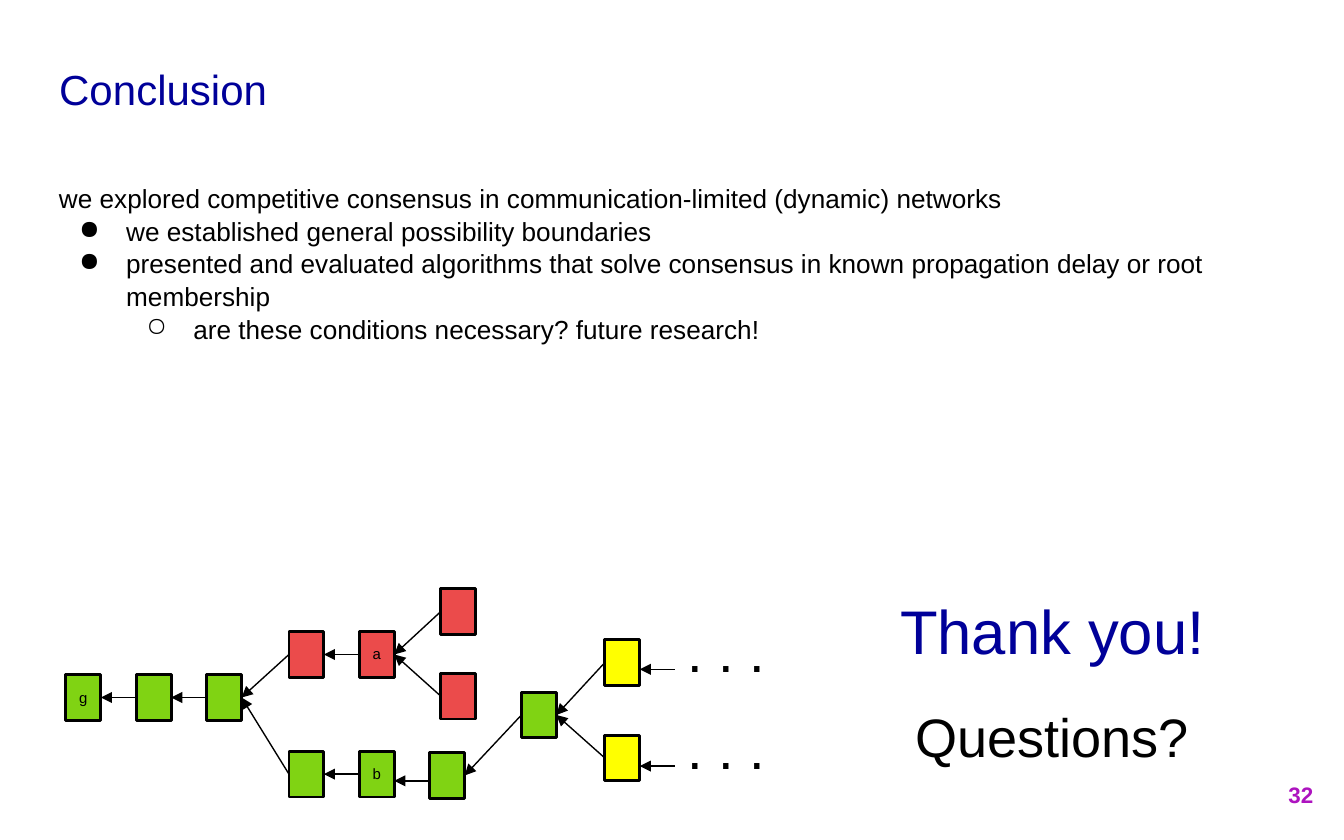
from lxml import etree
from pptx import Presentation
from pptx.dml.color import RGBColor
from pptx.enum.shapes import MSO_CONNECTOR, MSO_SHAPE
from pptx.enum.text import MSO_ANCHOR, PP_ALIGN
from pptx.oxml.ns import qn
from pptx.util import Inches, Pt

RECTANGLE, STRAIGHT = MSO_SHAPE.RECTANGLE, MSO_CONNECTOR.STRAIGHT
TOP, MIDDLE = MSO_ANCHOR.TOP, MSO_ANCHOR.MIDDLE
LEFT, CENTER, RIGHT = PP_ALIGN.LEFT, PP_ALIGN.CENTER, PP_ALIGN.RIGHT

BLACK, NAVY, PURPLE = "000000", "000099", "AD13BF"
GREEN, RED, YELLOW = "80D313", "EB4B4B", "FFFF00"

# The grid has square cells: 100 columns by 62.5 rows.
COLUMNS = 100
BLOCK_WIDTH, BLOCK_HEIGHT = 2.6, 3.4
CHAIN_STEP = 5.24
CHAIN_START, FORK_START = 4.9, 21.5
DOTS_COLUMN = 50.2

CONCLUSIONS = [  # text, bullet, indent in inches
    ("we explored competitive consensus in communication-limited (dynamic) networks", None, 0),
    ("we established general possibility boundaries", "●", 0.5),
    ("presented and evaluated algorithms that solve consensus in known "
     "propagation delay or root membership", "●", 0.5),
    ("are these conditions necessary? future research!", "○", 1),
]

BLOCKS = {  # column, row, colour, label
    "genesis": (CHAIN_START, 50.2, GREEN, "g"),
    "second": (CHAIN_START + CHAIN_STEP, 50.2, GREEN, ""),
    "third": (CHAIN_START + 2 * CHAIN_STEP, 50.2, GREEN, ""),
    "red fork": (FORK_START, 47, RED, ""),
    "a": (FORK_START + CHAIN_STEP, 47, RED, "a"),
    "red upper": (32.8, 43.8, RED, ""),
    "red lower": (32.8, 50.1, RED, ""),
    "green fork": (FORK_START, 55.9, GREEN, ""),
    "b": (FORK_START + CHAIN_STEP, 55.9, GREEN, "b"),
    "after b": (FORK_START + 2 * CHAIN_STEP, 56, GREEN, ""),
    "root": (38.8, 51.5, GREEN, ""),
    "yellow upper": (45, 47.6, YELLOW, ""),
    "yellow lower": (45, 54.7, YELLOW, ""),
}
PARENTS = [  # block, the block it points back to
    ("second", "genesis"), ("third", "second"),
    ("red fork", "third"), ("green fork", "third"),
    ("a", "red fork"), ("b", "green fork"),
    ("red upper", "a"), ("red lower", "a"), ("root", "after b"),
    ("yellow upper", "root"), ("yellow lower", "root"),
]


def rgb(colour):
    return RGBColor.from_string(colour)


class Deck:
    """Holds the style and the current slide; places are in grid cells."""

    font = "Arial"
    inset = Inches(0.1)

    def __init__(self):
        self.presentation = Presentation()
        self.presentation.slide_width = Inches(10)
        self.presentation.slide_height = Inches(6.25)
        self.cell = self.presentation.slide_width / COLUMNS
        self.slide = self.presentation.slides.add_slide(self.presentation.slide_layouts[5])

    def grid(self, *cells):
        return [round(cell * self.cell) for cell in cells]

    def frame(self, shape, anchor):
        frame = shape.text_frame
        frame.word_wrap = True
        frame.vertical_anchor = anchor
        frame.margin_left = frame.margin_right = self.inset
        frame.margin_top = frame.margin_bottom = self.inset
        return frame

    def styled_run(self, paragraph, text, size, colour, align=LEFT, bold=False):
        paragraph.alignment = align
        run = paragraph.add_run()
        run.text = text
        run.font.name, run.font.size, run.font.bold = self.font, Pt(size), bold
        run.font.color.rgb = rgb(colour)

    def title(self, text, place, size):
        title = self.slide.shapes.title
        title.left, title.top, title.width, title.height = self.grid(*place)
        self.styled_run(self.frame(title, MIDDLE).paragraphs[0], text, size, NAVY)

    def text(self, text, place, size, colour, align=LEFT, anchor=TOP, bold=False):
        box = self.slide.shapes.add_textbox(*self.grid(*place))
        self.styled_run(self.frame(box, anchor).paragraphs[0], text, size, colour, align, bold)

    def bullets(self, items, place, size):
        box = self.slide.shapes.add_textbox(*self.grid(*place))
        frame = self.frame(box, TOP)
        for index, (text, bullet, indent) in enumerate(items):
            paragraph = frame.add_paragraph() if index else frame.paragraphs[0]
            paragraph.line_spacing = 1.04
            if bullet:
                properties = paragraph._p.get_or_add_pPr()
                properties.set("marL", str(Inches(indent)))
                properties.set("indent", str(Inches(-0.35)))
                etree.SubElement(properties, qn("a:buChar")).set("char", bullet)
            self.styled_run(paragraph, text, size, BLACK)

    def block(self, column, row, colour, label):
        place = self.grid(column, row, BLOCK_WIDTH, BLOCK_HEIGHT)
        block = self.slide.shapes.add_shape(RECTANGLE, *place)
        block.shadow.inherit = False
        block.fill.solid()
        block.fill.fore_color.rgb = rgb(colour)
        block.line.color.rgb = rgb(BLACK)
        block.line.width = Pt(1.5)
        if label:
            self.styled_run(self.frame(block, TOP).paragraphs[0], label, 8, BLACK)

    def arrow(self, start, end):
        arrow = self.slide.shapes.add_connector(STRAIGHT, *self.grid(*start, *end))
        arrow.line.color.rgb = rgb(BLACK)
        arrow.line.width = Pt(0.75)
        properties = arrow._element.spPr
        etree.SubElement(properties.get_or_add_ln(), qn("a:tailEnd")).set("type", "triangle")
        etree.SubElement(properties, qn("a:effectLst"))


def left_side(name):
    column, row = BLOCKS[name][:2]
    return column, row + BLOCK_HEIGHT / 2


def right_side(name):
    column, row = left_side(name)
    return column + BLOCK_WIDTH, row


def main():
    deck = Deck()
    deck.title("Conclusion", (3.4, 3.1, 93.2, 7), 22.5)
    deck.bullets(CONCLUSIONS, (3.4, 12.5, 93.2, 44.9), 14)
    deck.text("Thank you!", (59.2, 43.1, 38.2, 7.6), 33, NAVY, CENTER)
    deck.text("Questions?", (59.2, 51.3, 38.2, 6.9), 29, BLACK, CENTER)
    deck.text("32", (92.7, 56.7, 6, 4.8), 12, PURPLE, RIGHT, MIDDLE, bold=True)

    for block in BLOCKS.values():
        deck.block(*block)
    for child, parent in PARENTS:
        deck.arrow(left_side(child), right_side(parent))
    deck.arrow((left_side("after b")[0], 58.1), (right_side("b")[0], 58.1))
    for name, row in (("yellow upper", 49.8), ("yellow lower", 57)):
        deck.arrow((DOTS_COLUMN, row), (right_side(name)[0], row))
        deck.text(". . .", (DOTS_COLUMN, row - 4.9, 9.6, 7.1), 30, BLACK)

    deck.presentation.save("out.pptx")


if __name__ == "__main__":
    main()
